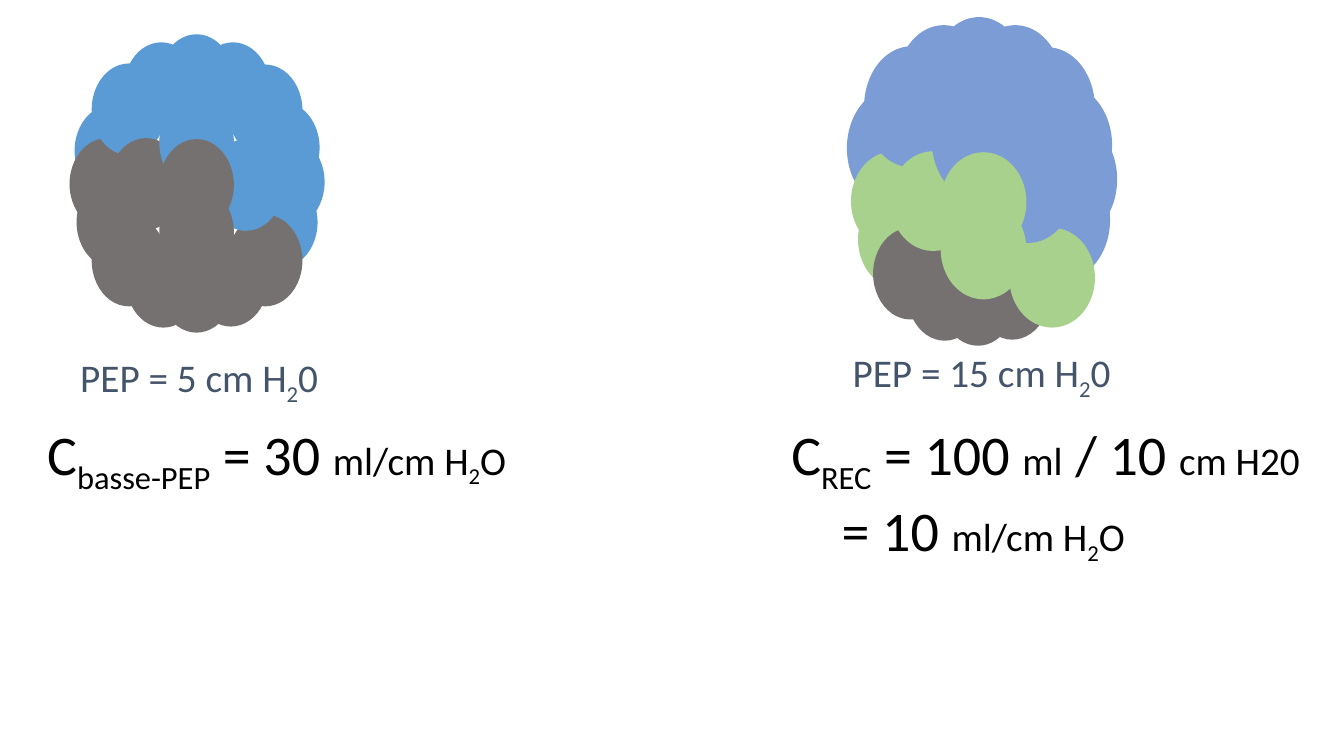
from pptx import Presentation
from pptx.dml.color import RGBColor
from pptx.enum.shapes import MSO_SHAPE
from pptx.enum.text import MSO_AUTO_SIZE, PP_ALIGN
from pptx.util import Inches, Pt

COLORS = {"air": "5B9BD5", "stretch": "7C9CD6", "gain": "A9D18E",
          "shut": "767171", "label": "44546A", "text": "000000"}

# Kind of alveolus: colour, width, height, shift across, shift down
KINDS = {"a": ("air", 0.74, 0.91, 0, 0),
         "s": ("stretch", 0.94, 1.2, -0.09, -0.3),
         "g": ("gain", 0.85, 0.99, 0, 0),
         "x": ("shut", 0.74, 0.91, 0, 0)}

# Alveoli inside a lung, from back to front
CELLS = [(1.25, 0.08), (0.54, 0.08), (1.72, 1.41), (1.74, 0.67), (1.23, 1.99),
         (0.07, 1.41), (0.56, 2.0), (0.05, 0.7), (0, 1.03), (0.89, 2.05),
         (1.79, 1.01), (0.22, 0.29), (1.57, 0.3), (0.22, 1.79), (0.89, 0),
         (1.57, 1.79), (0.39, 1.03), (1.38, 1.04), (0.89, 1.51), (0.89, 0.62),
         (0.89, 1.04)]


def add_lung(slide, left, top, kinds):
    shapes = slide.shapes.add_group_shape().shapes
    for (x, y), kind in zip(CELLS, kinds):
        color, width, height, dx, dy = KINDS[kind]
        cell = shapes.add_shape(
            MSO_SHAPE.OVAL, Inches(left + x + dx), Inches(top + y + dy),
            Inches(width), Inches(height))
        cell.shadow.inherit = False
        cell.fill.solid()
        cell.fill.fore_color.rgb = RGBColor.from_string(COLORS[color])
        cell.line.fill.background()


def add_text(slide, box, lines, color, align=PP_ALIGN.LEFT):
    """Each line is a list of (text, size, is subscript)."""
    frame = slide.shapes.add_textbox(*map(Inches, box)).text_frame
    frame.word_wrap = True
    frame.auto_size = MSO_AUTO_SIZE.SHAPE_TO_FIT_TEXT
    for i, parts in enumerate(lines):
        para = frame.add_paragraph() if i else frame.paragraphs[0]
        para.alignment = align
        for text, size, sub in parts:
            run = para.add_run()
            run.text = text
            run.font.name = "Calibri"
            run.font.size = Pt(size)
            run.font.color.rgb = RGBColor.from_string(COLORS[color])
            if sub:
                run.font._element.set("baseline", "-25000")


def add_label(slide, left, top, level):
    parts = [(f"PEP = {level} cm H", 28, False), ("2", 28, True), ("0", 28, False)]
    add_text(slide, (left, top, 3.17, 0.57), [parts], "label", PP_ALIGN.CENTER)


def main():
    prs = Presentation()
    prs.slide_width, prs.slide_height = Inches(13.33), Inches(7.5)
    slide = prs.slides.add_slide(prs.slide_layouts[6])
    unit = [("ml/cm H", 28, False), ("2", 28, True), ("O", 28, False)]

    # Low pressure
    add_lung(slide, 0.69, 0.34, "aaaaxxxaxxaaaxaxxaxax")
    add_label(slide, 0.39, 3.46, 5)
    add_text(slide, (0.37, 4.11, 6.06, 0.77),
             [[("C", 40, False), ("basse-PEP", 40, True),
               (" = 30 ", 40, False), *unit]], "text")

    # High pressure
    add_lung(slide, 8.44, 0.47, "ssssxgxsgxsssxsggsgsg")
    add_label(slide, 8.15, 3.41, 15)
    add_text(slide, (7.75, 4.11, 5.61, 1.45),
             [[("C", 40, False), ("REC", 40, True), (" = 100 ", 40, False),
               ("ml", 28, False), (" / 10 ", 40, False), ("cm H20", 28, False)],
              [("\t= 10 ", 40, False), *unit]], "text")

    prs.save("out.pptx")


if __name__ == "__main__":
    main()
